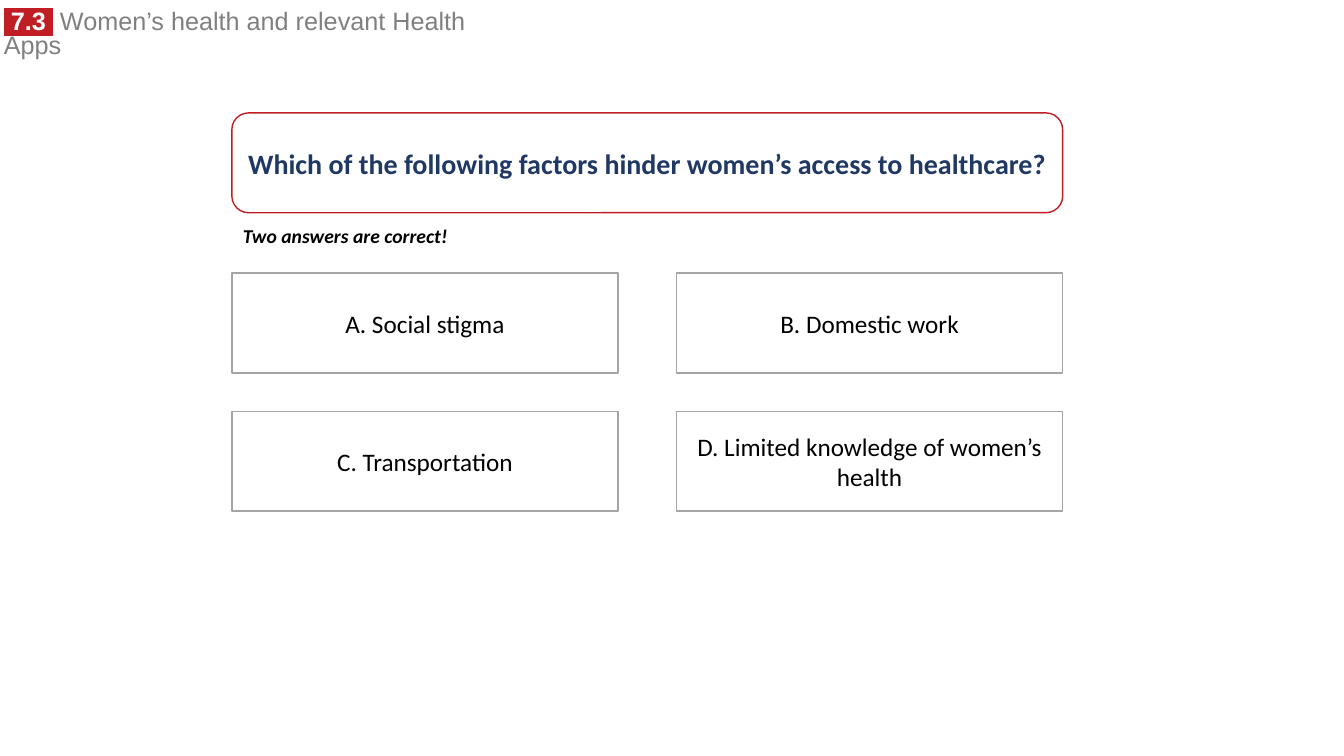
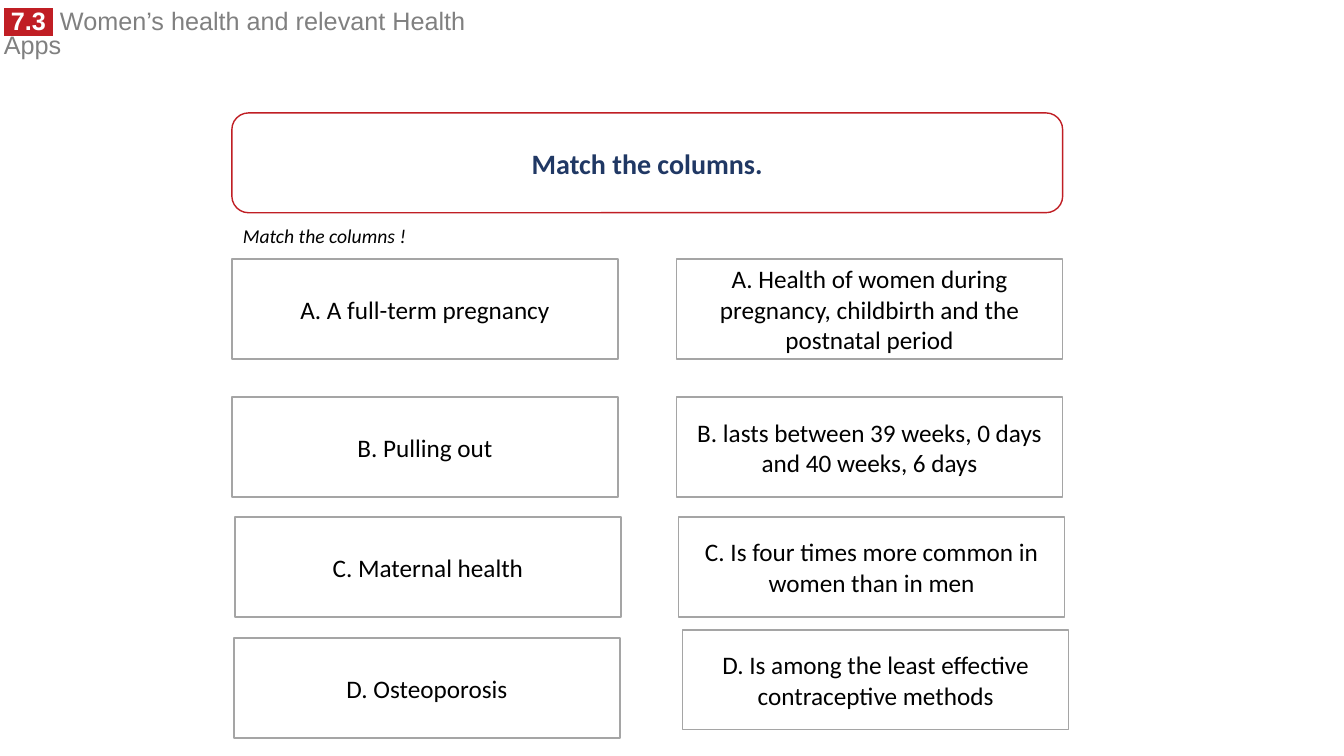
from dataclasses import dataclass

from lxml import etree
from pptx import Presentation
from pptx.dml.color import RGBColor
from pptx.enum.shapes import MSO_SHAPE
from pptx.enum.text import MSO_ANCHOR, MSO_AUTO_SIZE, PP_ALIGN
from pptx.oxml.ns import qn
from pptx.util import Inches, Pt

RECTANGLE = MSO_SHAPE.RECTANGLE
ROUNDED = MSO_SHAPE.ROUNDED_RECTANGLE
MIDDLE = MSO_ANCHOR.MIDDLE
CENTER = PP_ALIGN.CENTER
GROW = MSO_AUTO_SIZE.SHAPE_TO_FIT_TEXT


@dataclass(frozen=True)
class Theme:
    red: str = "C01E24"
    navy: str = "203864"
    grey: str = "808080"
    border: str = "A5A5A5"
    white: str = "FFFFFF"
    black: str = "000000"
    header_font: str = "Arial"
    body_font: str = "Calibri"
    question_size: int = 20
    body_size: int = 18
    hint_size: int = 14


THEME = Theme()
HEADER_BOX = (-0.06, 0.06, 5.01, 0.35)
QUESTION_BOX = (2.3, 1.12, 8.24, 0.99)
CARD_SIZE = (3.83, 0.99)
COLUMN_STEP = 4.41
ROW_STEP = 1.37


def add_run(para, text, size, color, font=THEME.body_font, bold=False, italic=False):
    span = para.add_run()
    span.text = text
    span.font.size = Pt(size)
    span.font.color.rgb = RGBColor.from_string(color)
    span.font.name = font
    span.font.bold = bold
    span.font.italic = italic
    return span


def highlight(span, color):
    fill = span.font.fill._xPr.find(qn("a:solidFill"))
    marker = etree.Element(qn("a:highlight"))
    etree.SubElement(marker, qn("a:srgbClr"), val=color)
    fill.addnext(marker)


def add_text_box(page, box, wrap):
    frame = page.shapes.add_textbox(*map(Inches, box)).text_frame
    frame.word_wrap = wrap
    frame.auto_size = GROW
    return frame.paragraphs[0]


def add_header(page, box):
    para = add_text_box(page, box, True)
    para.line_spacing = 0.8
    number = add_run(para, " 7.3 ", THEME.body_size, THEME.white, THEME.header_font, bold=True)
    highlight(number, THEME.red)
    add_run(para, " Women’s health and relevant Health Apps", THEME.body_size,
            THEME.grey, THEME.header_font)


def add_panel(page, box, text, kind, border, size, color, bold=False):
    panel = page.shapes.add_shape(kind, *map(Inches, box))
    panel.shadow.inherit = False
    panel.fill.solid()
    panel.fill.fore_color.rgb = RGBColor.from_string(THEME.white)
    panel.line.color.rgb = RGBColor.from_string(border)
    panel.line.width = Pt(1)
    frame = panel.text_frame
    frame.word_wrap = True
    frame.vertical_anchor = MIDDLE
    para = frame.paragraphs[0]
    para.alignment = CENTER
    add_run(para, text, size, color, bold=bold)


def add_question(page, box, question, hint, hint_width, hint_bold):
    left, top, _, _ = box
    add_panel(page, box, question, ROUNDED, THEME.red, THEME.question_size,
              THEME.navy, bold=True)
    para = add_text_box(page, (left + 0.01, top + 1.05, hint_width, 0.34), False)
    add_run(para, hint, THEME.hint_size, THEME.black, bold=hint_bold, italic=True)


def add_cards(page, left, top, cards):
    for x, y, text in cards:
        add_panel(page, (left + x, top + y, *CARD_SIZE), text, RECTANGLE,
                  THEME.border, THEME.body_size, THEME.black)


def grid(texts, columns=2):
    return [(index % columns * COLUMN_STEP, index // columns * ROW_STEP, text)
            for index, text in enumerate(texts)]


def add_quiz_page(deck, question, hint, hint_width, hint_bold, cards_top, cards):
    page = deck.slides.add_slide(deck.slide_layouts[6])
    add_header(page, HEADER_BOX)
    add_question(page, QUESTION_BOX, question, hint, hint_width, hint_bold)
    add_cards(page, QUESTION_BOX[0], cards_top, cards)


def main():
    deck = Presentation()
    deck.slide_width = Inches(13.33)
    deck.slide_height = Inches(7.5)
    add_quiz_page(
        deck, "Which of the following factors hinder women’s access to healthcare?",
        "Two answers are correct!", 2.24, True, 2.71,
        grid(["A. Social stigma", "B. Domestic work", "C. Transportation",
              "D. Limited knowledge of women’s health"]))
    add_quiz_page(
        deck, "Match the columns.", "Match the columns !", 1.84, False, 2.57,
        grid(["A. A full-term pregnancy",
              "A. Health of women during pregnancy, childbirth and the postnatal period",
              "B. Pulling out",
              "B. lasts between 39 weeks, 0 days and 40 weeks, 6 days"])
        + [(0.03, 2.56, "C. Maternal health"),
           (4.43, 2.56, "C. Is four times more common in women than in men"),
           (0.02, 3.76, "D. Osteoporosis"),
           (4.47, 3.68, "D. Is among the least effective contraceptive methods")])
    deck.save("out.pptx")


if __name__ == "__main__":
    main()
